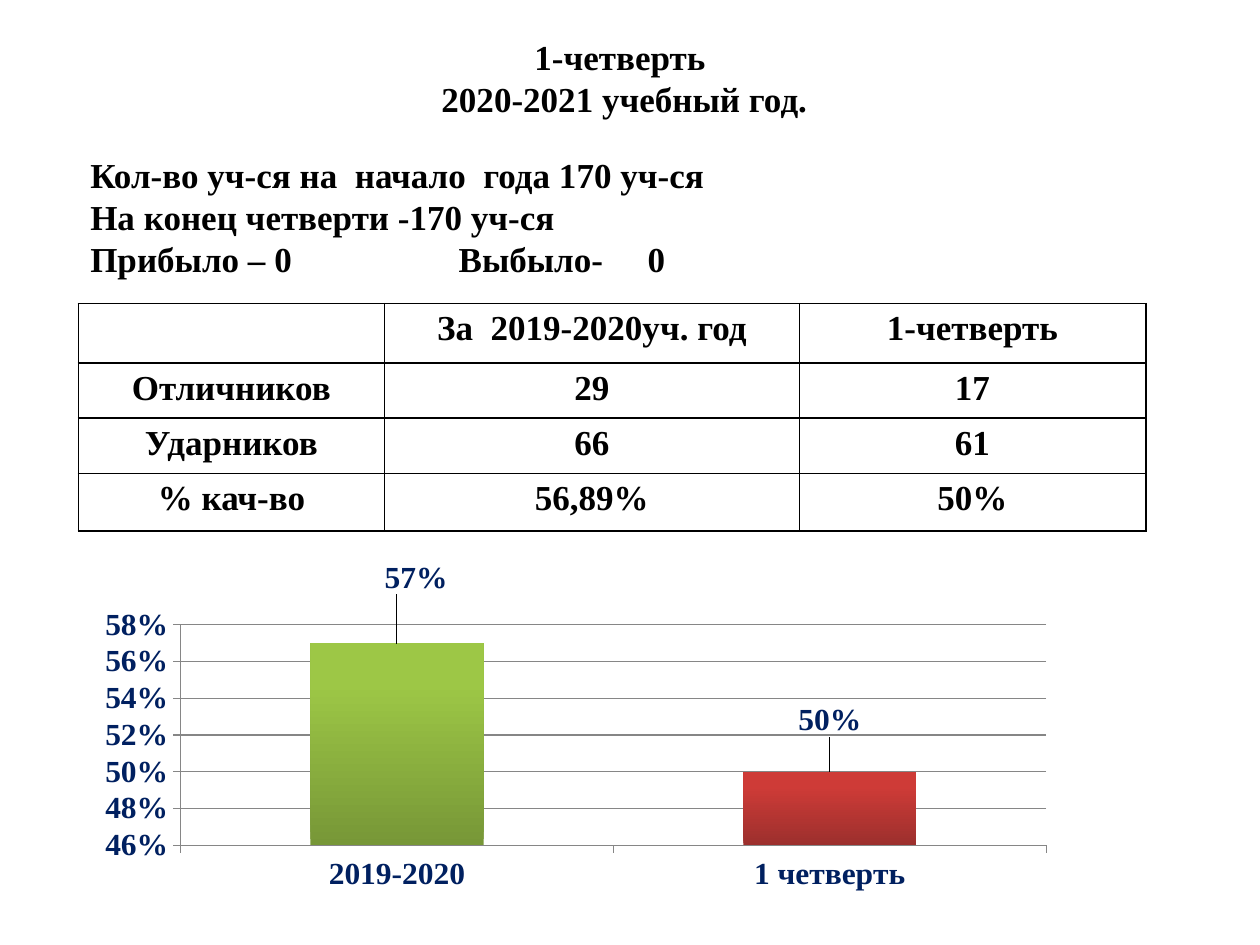
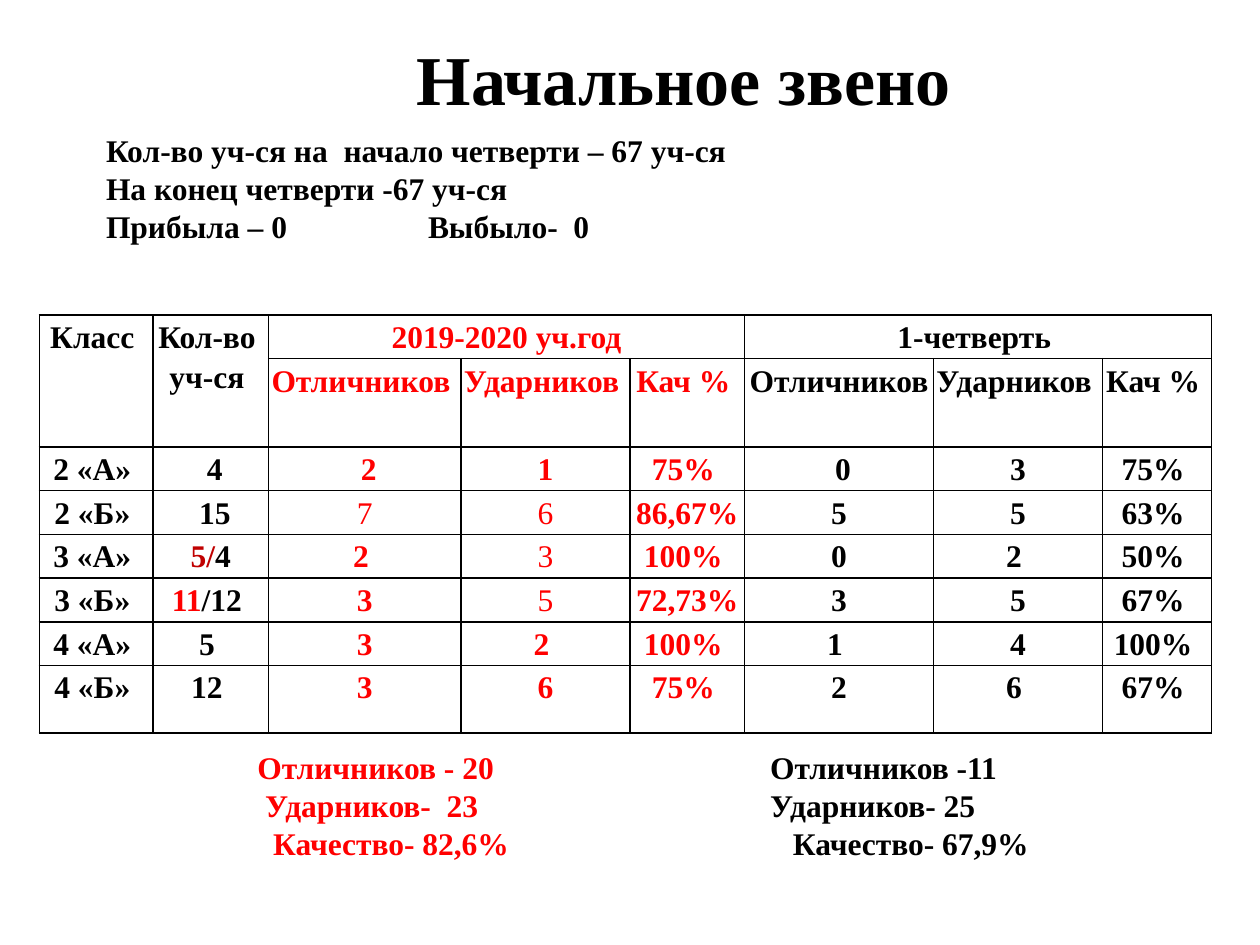
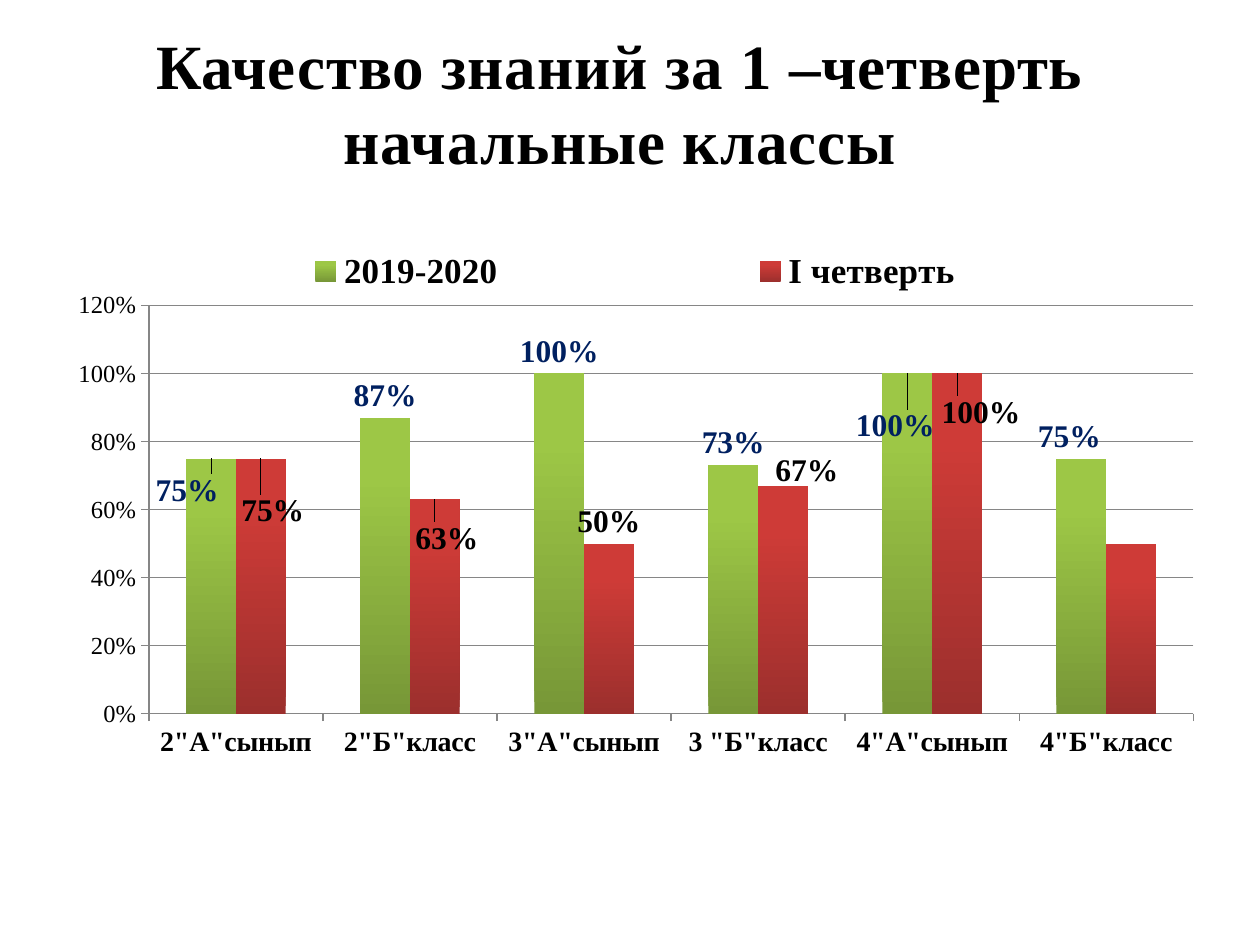
from lxml.etree import SubElement as Sub
from pptx import Presentation
from pptx.chart.data import CategoryChartData as Data
from pptx.dml.color import RGBColor as Rgb
from pptx.enum.chart import XL_CHART_TYPE as Kind, XL_LABEL_POSITION as Spot
from pptx.enum.chart import XL_LEGEND_POSITION as Side, XL_TICK_MARK as Tick
from pptx.enum.text import PP_ALIGN as Align
from pptx.oxml.ns import qn
from pptx.util import Pt

FONT = "Times New Roman"
HUE = {
    "black": "000000", "red": "FF0000", "dark": "C00000", "navy": "002060",
    "grid": "868686", "green0": "779737", "green1": "9DC746",
    "rose0": "9C2F2D", "rose1": "CE3B37",
}


def style(font, size, hue="black", bold=True):
    font.name, font.size, font.bold = FONT, Pt(size), bold
    font.color.rgb = Rgb.from_string(HUE[hue])


def place(node, spot, **vals):
    lay = node.makeelement(qn("c:layout"))
    man = Sub(lay, qn("c:manualLayout"))
    for key, val in vals.items():
        Sub(man, qn("c:" + key), val=str(val))
    for old in node.findall(qn("c:layout")):
        node.remove(old)
    node.insert(spot, lay)


deck = Presentation()
deck.slide_width, deck.slide_height = Pt(720), Pt(540)
pages = [deck.slides.add_slide(deck.slide_layouts[6]) for _ in range(3)]

boxes = [
    (0, (70.5, 16.5, 572.5, 78), 20, Align.CENTER, 0, [
        ([("1-четверть ", "black")], ()),
        ([("2020-2021 учебный год.", "black")], ())]),
    (0, (44.5, 84.25, 643.5, 80), 20, Align.LEFT, 0, [
        ([("Кол-во уч-ся на  начало  года 170 уч-ся", "black")], ()),
        ([("На конец четверти -170 уч-ся", "black")], ()),
        ([("Прибыло – 0\tВыбыло-\t0", "black")], (210.5, 318.5))]),
    (1, (112.5, 16.5, 556.5, 55.5), 40, Align.CENTER, 0, [
        ([("Начальное звено", "black")], ())]),
    (1, (53.5, 71.5, 624, 94.5), 18, Align.LEFT, 0, [
        ([("Кол-во уч-ся на  начало четверти – 67 уч-ся", "black")], ()),
        ([("На конец четверти -67 уч-ся", "black")], ()),
        ([("Прибыла – 0\tВыбыло-  0", "black")], (184,))]),
    (1, (41, 424, 652.5, 94.5), 18, Align.LEFT, 0, [
        ([("\tОтличников - 20", "red"), ("\tОтличников -11", "black")], (99, 392)),
        ([("\tУдарников-  23", "red"), ("\tУдарников- 25", "black")], (103.5, 392)),
        ([("\tКачество- 82,6%", "red"), ("\tКачество- 67,9%", "black")], (108, 405))]),
    (2, (28, 11.5, 652.5, 94.5), 36, Align.CENTER, 50, [
        ([("Качество знаний за 1 –четверть", "black")], ()),
        ([("начальные классы", "black")], ())]),
]
for page, area, size, align, space, lines in boxes:
    frame = pages[page].shapes.add_textbox(*map(Pt, area)).text_frame
    frame.word_wrap = True
    for i, (runs, tabs) in enumerate(lines):
        par = frame.add_paragraph() if i else frame.paragraphs[0]
        par.alignment = align
        for text, hue in runs:
            run = par.add_run()
            run.text = text
            style(run.font, size, hue)
            if space:
                run.font._element.set("spc", str(space))
        if tabs:
            stops = Sub(par._p.get_or_add_pPr(), qn("a:tabLst"))
            for pos in tabs:
                Sub(stops, qn("a:tab"), pos=str(Pt(pos)), algn="l")

heads = ["Отличников ", "Ударников ", "Кач % "]
tables = [
    (0, (44.75, 173.5), 20, 5, (175, 237, 198), (34, 31.5, 31.5, 33), [], (), (), [
        ["", "За  2019-2020уч. год", "1-четверть"],
        ["Отличников", "29", "17"],
        ["Ударников", "66", "61"],
        ["% кач-во", "56,89%", "50%"]]),
    (1, (22.5, 180), 18, 1.5, (65, 66, 110, 96.5, 65.5, 108, 96.5, 62.5),
     (25, 50.5, 25, 25, 25, 25, 25, 38.5),
     [(0, 0, 1, 0), (0, 1, 1, 1), (0, 2, 0, 4), (0, 5, 0, 7)],
     (2, 3, 4), {(3, 2), (3, 3), (4, 3), (5, 3)}, [
        ["Класс ", "Кол-во \nуч-ся ", "2019-2020 уч.год", "", "", "1-четверть ", "", ""],
        ["", "", *heads, *heads],
        ["2 «А» ", " 4", " 2", "1", "75% ", " 0", "3", "75% "],
        ["2 «Б» ", " 15", "7", "6", "86,67% ", "5", "5", "63% "],
        ["3 «А» ", [("5/", "dark"), ("4", "black")],
         "2 ", "3", "100% ", "0", "2 ", "50% "],
        ["3 «Б» ", [("11", "red"), ("/12 ", "black")],
         "3", "5", "72,73% ", "3", "5", "67% "],
        ["4 «А» ", "5 ", "3", "2 ", "100% ", "1 ", "4", "100% "],
        ["4 «Б» ", "12 ", "3", "6", "75% ", "2", "6 ", "67% "]]),
]
for page, spot, size, pad, wide, high, spans, reds, light, rows in tables:
    area = (*spot, sum(wide), sum(high))
    grid = pages[page].shapes.add_table(len(high), len(wide), *map(Pt, area)).table
    grid.first_row = grid.horz_banding = False
    for col, width in zip(grid.columns, wide):
        col.width = Pt(width)
    for row, height in zip(grid.rows, high):
        row.height = Pt(height)
    for r, row in enumerate(rows):
        for c, item in enumerate(row):
            cell = grid.cell(r, c)
            cell.margin_left = cell.margin_right = Pt(pad)
            cell.margin_top = cell.margin_bottom = 0
            props = cell._tc.get_or_add_tcPr()
            for tag in ("a:lnL", "a:lnR", "a:lnT", "a:lnB"):
                edge = Sub(props, qn(tag), w=str(Pt(1)))
                Sub(Sub(edge, qn("a:solidFill")), qn("a:srgbClr"), val=HUE["black"])
            cell.fill.background()
            hue = "red" if c in reds else "black"
            parts = [[(t, hue)] for t in item.split("\n")] if isinstance(item, str) else [item]
            for i, runs in enumerate(parts):
                par = cell.text_frame.add_paragraph() if i else cell.text_frame.paragraphs[0]
                par.alignment, par.line_spacing = Align.CENTER, 1.15
                for text, tint in runs:
                    if text:
                        run = par.add_run()
                        run.text = text
                        style(run.font, size, tint, (r, c) not in light)
    for top, left, low, right in spans:
        grid.cell(top, left).merge(grid.cell(low, right))

charts = [
    (0, (48.25, 321, 550, 196.5), (0.1, 0.16, 0.9, 0.66), (0.46, 0.58, 0.02),
     (18, "navy", True), (18, "navy", True), ["2019-2020", "1 четверть"], [
        ("Series 1", [0.57, 0.5], ["green", "rose"], "navy",
         [(0.02, -0.13), (0, -0.09)])]),
    (2, (16.5, 124, 686, 389), (0.1, 0.13, 0.87, 0.6), (0, 1.2, 0.2),
     (16, "black", True), (14, "black", False),
     ['2"А"сынып', '2"Б"класс', '3"А"сынып', '3 "Б"класс', '4"А"сынып', '4"Б"класс'], [
        ("2019-2020", [0.75, 0.87, 1, 0.73, 1, 0.75], ["green"], "navy",
         [(-0.02, 0.08), (0, 0), (0, 0), (0, 0), (-0.01, 0.11), (-0.01, 0)]),
        ("I четверть", [0.75, 0.63, 0.5, 0.67, 1, 0.5], ["rose"], "black",
         [(0.01, 0.11), (0.01, 0.09), (0, 0), (0.02, 0.01), (0.02, 0.09)])]),
]
for page, area, plot, scale, catfont, valfont, cats, sets in charts:
    data = Data(number_format="0%")
    data.categories = cats
    for name, vals, *_ in sets:
        data.add_series(name, vals)
    chart = pages[page].shapes.add_chart(Kind.COLUMN_CLUSTERED, *map(Pt, area), data).chart
    style(chart.font, 18, bold=False)
    chart.has_title = False
    bars = chart.plots[0]
    bars.gap_width, bars.overlap, bars.vary_by_categories = 150, 0, False
    x, y, w, h = plot
    place(chart._chartSpace.chart.plotArea, 0, layoutTarget="inner",
          xMode="edge", yMode="edge", x=x, y=y, w=w, h=h)

    vaxis = chart.value_axis
    vaxis.minimum_scale, vaxis.maximum_scale, vaxis.major_unit = scale
    vaxis.tick_labels.number_format = "0%"
    vaxis.tick_labels.number_format_is_linked = False
    vaxis.has_major_gridlines = True
    lines = [vaxis.major_gridlines.format.line]
    for axis, look in ((chart.category_axis, catfont), (vaxis, valfont)):
        axis.major_tick_mark = Tick.OUTSIDE
        style(axis.tick_labels.font, *look)
        lines.append(axis.format.line)
    for line in lines:
        line.width = Pt(0.75)
        line.color.rgb = Rgb.from_string(HUE["grid"])

    for ser, (_, _, tones, hue, shifts) in zip(bars.series, sets):
        parts = [ser] if len(tones) == 1 else [ser.points[i] for i in range(len(tones))]
        for part, tone in zip(parts, tones):
            fill = part.format.fill
            fill.gradient()
            fill.gradient_angle = 90
            for i, stop in enumerate(fill.gradient_stops):
                stop.position = 0.8 * i
                stop.color.rgb = Rgb.from_string(HUE[f"{tone}{i}"])
        ser.data_labels.show_value = False
        for i in range(len(shifts)):
            label = ser.points[i].data_label
            style(label.font, 18, hue)
            label.position = Spot.OUTSIDE_END
        for node, (dx, dy) in zip(ser._element.iter(qn("c:dLbl")), shifts):
            place(node, 1, x=dx, y=dy)

    chart.has_legend = len(sets) > 1
    if chart.has_legend:
        key = chart.legend
        key.position, key.include_in_layout = Side.TOP, False
        style(key.font, 20)
        place(key._element, 1, xMode="edge", yMode="edge", x=0.03, y=0.04, w=0.95, h=0.08)

deck.save("out.pptx")
